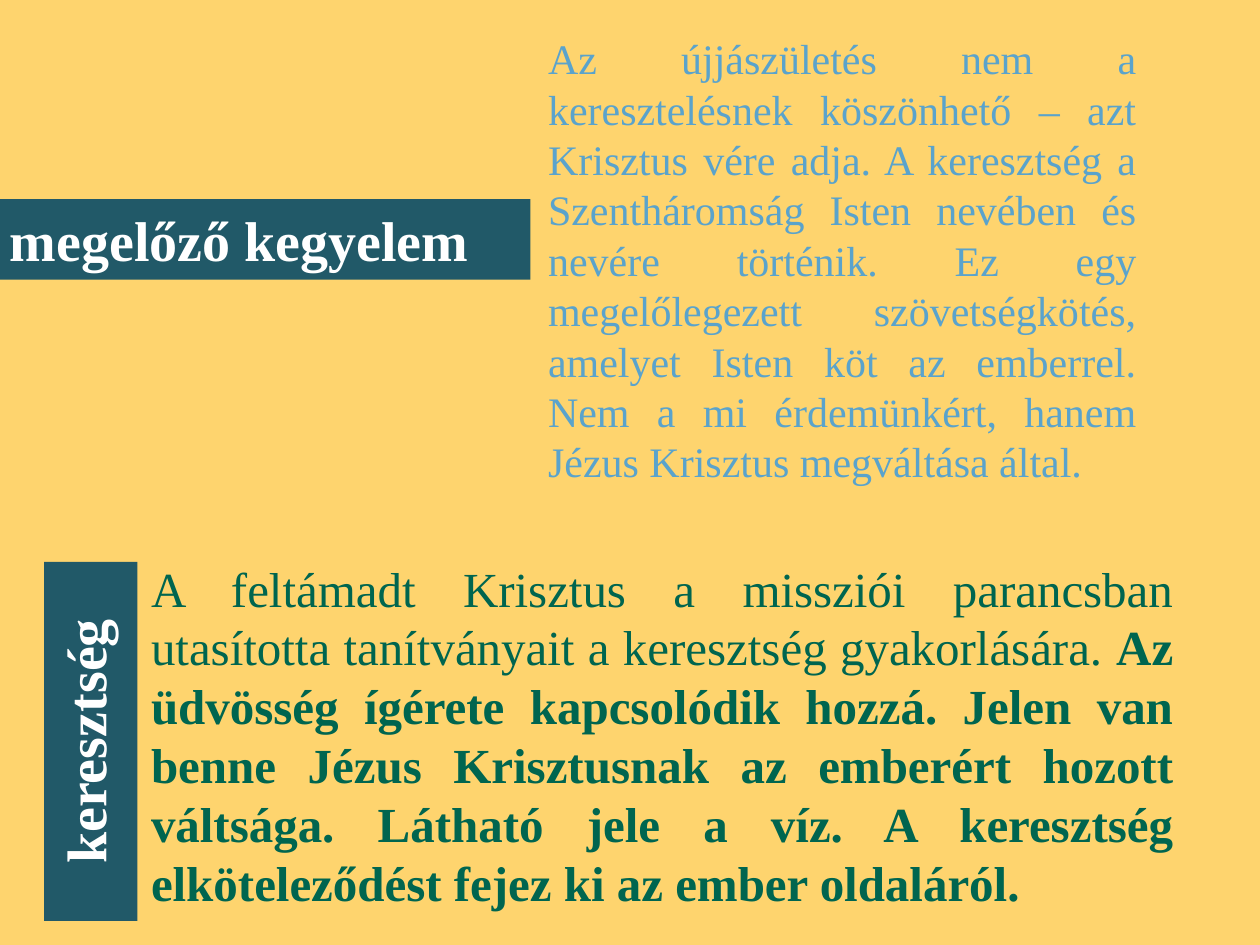
from dataclasses import dataclass

from pptx import Presentation
from pptx.dml.color import RGBColor
from pptx.enum.shapes import MSO_SHAPE
from pptx.enum.text import MSO_ANCHOR, MSO_AUTO_SIZE, PP_ALIGN
from pptx.util import Inches, Pt

RECTANGLE = MSO_SHAPE.RECTANGLE
TOP = MSO_ANCHOR.TOP
GROW = MSO_AUTO_SIZE.SHAPE_TO_FIT_TEXT
LEFT, CENTER, JUSTIFY = PP_ALIGN.LEFT, PP_ALIGN.CENTER, PP_ALIGN.JUSTIFY


@dataclass(frozen=True)
class Theme:
    font: str = "Times New Roman"
    background: str = "FED46E"
    label_fill: str = "215968"
    label_text: str = "FFFFFF"
    grace_text: str = "5AA3CC"
    baptism_text: str = "00654F"
    label_size: int = 32
    grace_size: int = 24
    baptism_size: int = 28


def add_run(paragraph, text, *, font, size, color, bold=False):
    run = paragraph.add_run()
    run.text = text
    run.font.name = font
    run.font.size = Pt(size)
    run.font.color.rgb = RGBColor.from_string(color)
    run.font.bold = bold


class SlideBuilder:
    """Adds themed labels and passages to one slide."""

    def __init__(self, slide, theme):
        self.slide = slide
        self.theme = theme
        background = slide.background.fill
        background.solid()
        background.fore_color.rgb = RGBColor.from_string(theme.background)

    def fill_text(self, holder, runs, align, size, color):
        frame = holder.text_frame
        frame.word_wrap = True
        frame.auto_size = GROW
        frame.vertical_anchor = TOP
        paragraph = frame.paragraphs[0]
        paragraph.alignment = align
        for text, bold in runs:
            add_run(paragraph, text, font=self.theme.font, size=size,
                    color=color, bold=bold)

    def label(self, text, box, align=LEFT, direction="horz"):
        bar = self.slide.shapes.add_shape(RECTANGLE, *map(Inches, box))
        bar.shadow.inherit = False
        bar.fill.solid()
        bar.fill.fore_color.rgb = RGBColor.from_string(self.theme.label_fill)
        bar.line.fill.background()
        self.fill_text(bar, [(text, True)], align, self.theme.label_size,
                       self.theme.label_text)
        bar.element.txBody.bodyPr.set("vert", direction)

    def passage(self, runs, box, size, color, side_insets=(0.1, 0.1)):
        passage = self.slide.shapes.add_textbox(*map(Inches, box))
        frame = passage.text_frame
        frame.margin_left, frame.margin_right = map(Inches, side_insets)
        self.fill_text(passage, runs, JUSTIFY, size, color)


def main():
    theme = Theme()
    deck = Presentation()
    deck.slide_width, deck.slide_height = Inches(10), Inches(7.5)
    builder = SlideBuilder(deck.slides.add_slide(deck.slide_layouts[6]), theme)

    builder.label("megelőző kegyelem", (-0.02, 1.58, 4.23, 0.64))
    builder.passage(
        [("Az újjászületés nem a keresztelésnek köszönhető – azt Krisztus vére "
          "adja. A keresztség a Szentháromság Isten nevében és nevére történik. "
          "Ez egy megelőlegezett szövetségkötés, amelyet Isten köt az emberrel. "
          "Nem a mi érdemünkért, hanem Jézus Krisztus megváltása által. ", False)],
        (4.04, 0.21, 5.37, 3.74), theme.grace_size, theme.grace_text,
        side_insets=(0.31, 0.39))
    builder.passage(
        [("A feltámadt Krisztus a missziói parancsban utasította tanítványait "
          "a keresztség gyakorlására. ", False),
         ("Az üdvösség ígérete kapcsolódik hozzá. Jelen van benne Jézus "
          "Krisztusnak az emberért hozott váltsága. Látható jele a víz. "
          "A keresztség elköteleződést fejez ki az ember oldaláról.", True)],
        (1.1, 4.38, 8.31, 2.93), theme.baptism_size, theme.baptism_text)
    builder.label("keresztség", (0.35, 4.46, 0.74, 2.85), CENTER, "vert270")

    deck.save("out.pptx")


if __name__ == "__main__":
    main()
